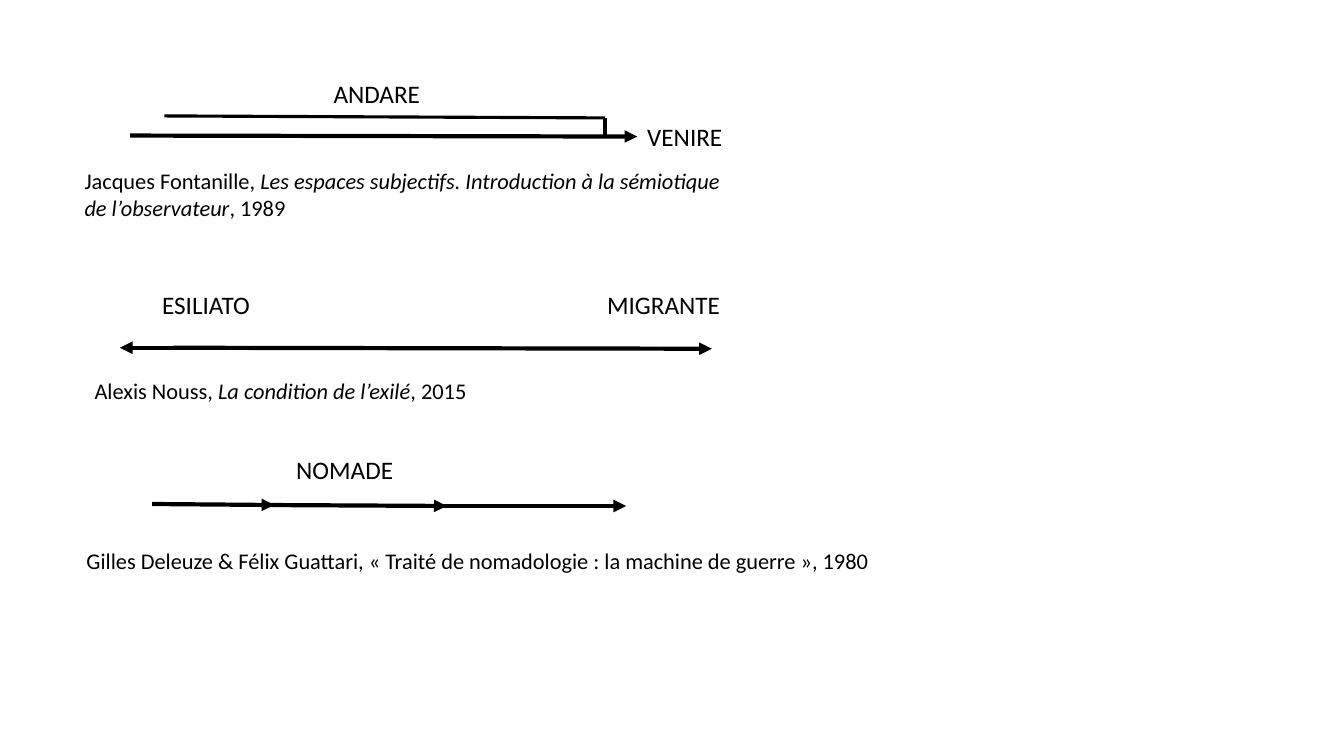
from lxml import etree
from pptx import Presentation
from pptx.dml.color import RGBColor
from pptx.enum.shapes import MSO_CONNECTOR
from pptx.enum.text import PP_ALIGN
from pptx.oxml.ns import qn
from pptx.util import Inches, Pt

STRAIGHT = MSO_CONNECTOR.STRAIGHT
LEFT, RIGHT = PP_ALIGN.LEFT, PP_ALIGN.RIGHT
CELL = 0.1


def grid(cells):
    return Inches(cells * CELL)


def color(hex_string):
    return RGBColor.from_string(hex_string)


class Diagram:
    font = "Calibri"
    ink = "000000"
    label_size = 18
    citation_size = 16
    arrow_width = 3
    bracket_width = 2.25

    def __init__(self, slide):
        self.slide = slide

    def text(self, column, row, width, height, runs, size, align=LEFT, wrap=True):
        shape = self.slide.shapes.add_textbox(
            grid(column), grid(row), grid(width), grid(height))
        shape.text_frame.word_wrap = wrap
        paragraph = shape.text_frame.paragraphs[0]
        paragraph.alignment = align
        for words, italic in runs:
            run = paragraph.add_run()
            run.text = words
            run.font.name = self.font
            run.font.size = Pt(size)
            run.font.italic = italic
            run.font.color.rgb = color(self.ink)

    def label(self, column, row, width, words, align=LEFT):
        self.text(column, row, width, 4, [(words, False)], self.label_size, align, False)

    def citation(self, column, row, width, height, author, title, ending):
        runs = [(author, False), (title, True), (ending, False)]
        self.text(column, row, width, height, runs, self.citation_size)

    def line(self, start, end, width):
        connector = self.slide.shapes.add_connector(
            STRAIGHT, *map(grid, start), *map(grid, end))
        connector.line.color.rgb = color(self.ink)
        connector.line.width = Pt(width)
        properties = connector._element.spPr
        etree.SubElement(properties, qn("a:effectLst"))
        return connector

    def arrow(self, start, end):
        connector = self.line(start, end, self.arrow_width)
        outline = connector.line._get_or_add_ln()
        etree.SubElement(outline, qn("a:tailEnd"), type="triangle")

    def bracket(self, points):
        for start, end in zip(points, points[1:]):
            self.line(start, end, self.bracket_width)


def main():
    presentation = Presentation()
    presentation.slide_width = Inches(13.33)
    presentation.slide_height = Inches(7.5)
    slide = presentation.slides.add_slide(presentation.slide_layouts[6])
    diagram = Diagram(slide)

    diagram.label(32.1, 7.3, 10.7, "ANDARE")
    diagram.bracket([(16.3, 11.5), (60, 11.7), (59.9, 13.5)][:2] + [(60, 13.5)])
    diagram.arrow((12.9, 13.45), (63.2, 13.55))
    diagram.label(63.2, 11.5, 9.5, "VENIRE")
    diagram.citation(
        7.4, 16.1, 66.7, 6.4, "Jacques Fontanille, ",
        "Les espaces subjectifs. Introduction à la sémiotique de l’observateur", ", 1989")

    diagram.label(15.1, 28.2, 11, "ESILIATO")
    diagram.label(58.5, 28.2, 13.9, "MIGRANTE", RIGHT)
    diagram.arrow((18.3, 34.5), (11.9, 34.5))
    diagram.arrow((17.2, 34.5), (70.6, 34.6))
    diagram.citation(
        8.4, 36.9, 66.7, 3.7, "Alexis Nouss, ", "La condition de l’exilé", ", 2015")

    diagram.label(28.4, 44.6, 21.3, "NOMADE")
    for start, end in [
        ((15.1, 50), (27.2, 50.1)),
        ((26, 50.1), (44.3, 50.2)),
        ((43.9, 50.2), (62.1, 50.2)),
    ]:
        diagram.arrow(start, end)
    diagram.text(
        7.6, 53.8, 114, 3.7,
        [("Gilles Deleuze & Félix Guattari, « Traité de nomadologie : la machine de guerre », 1980", False)],
        diagram.citation_size)

    presentation.save("out.pptx")


if __name__ == "__main__":
    main()
